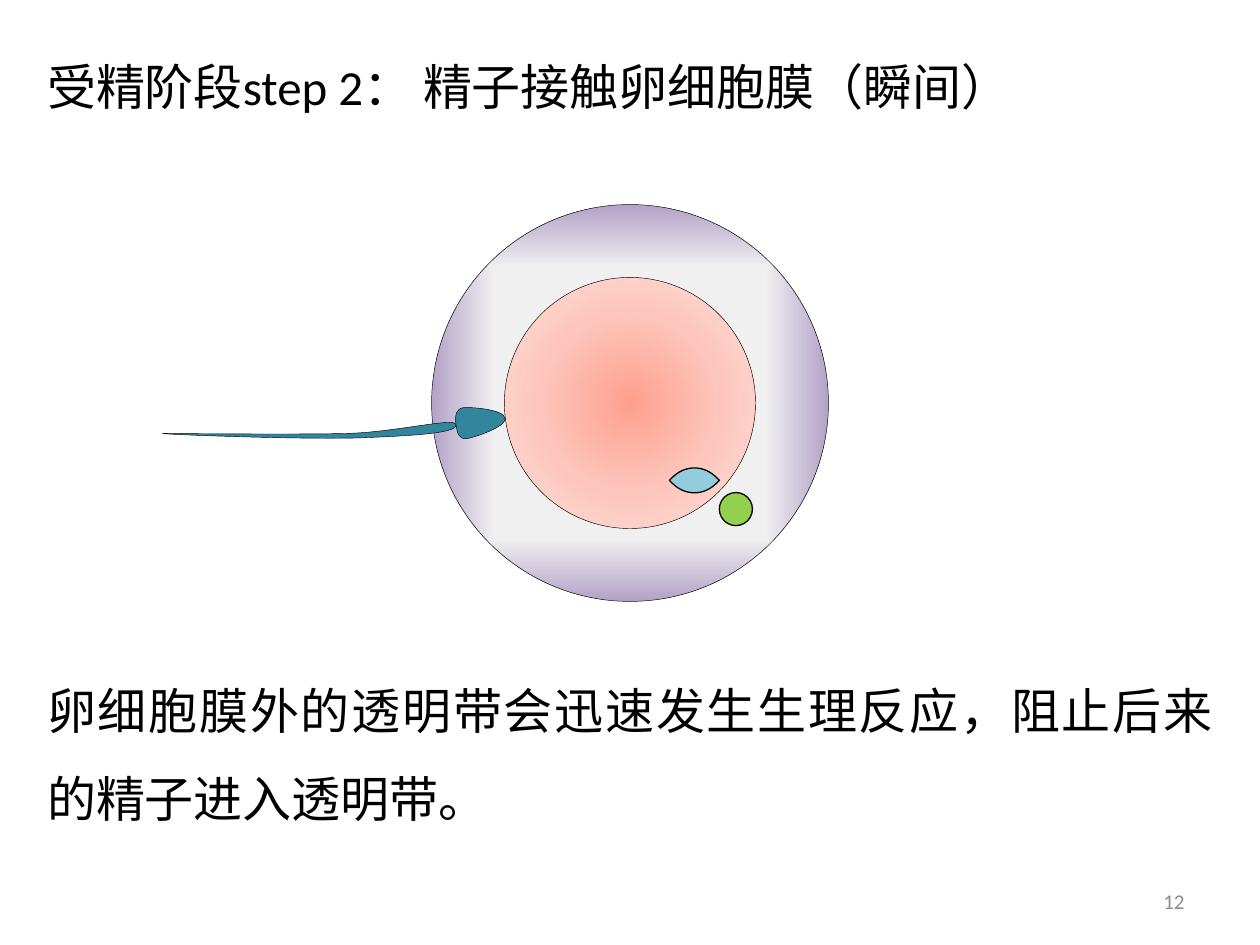
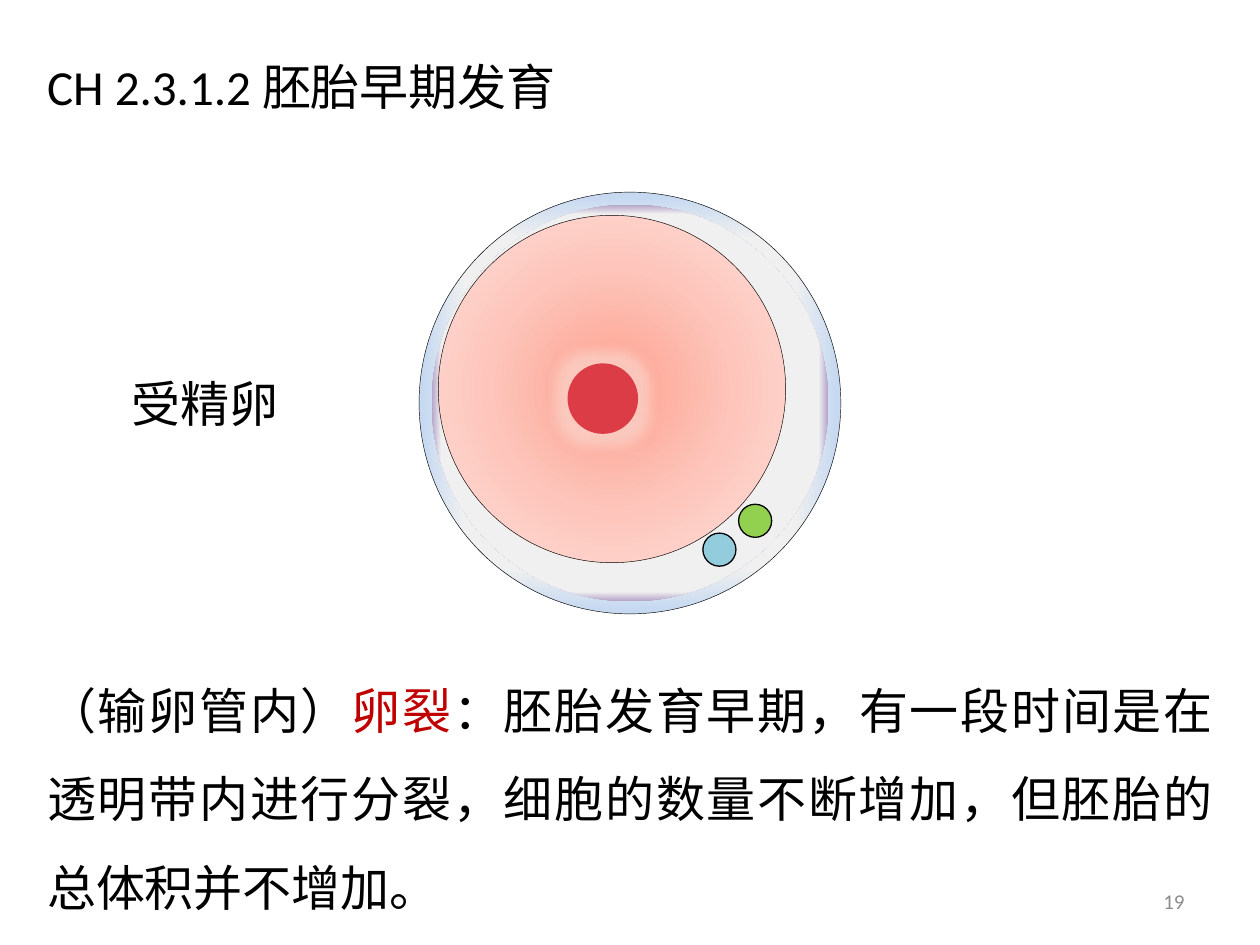
import math
import pptx
import pptx.dml.color
import pptx.enum.shapes
import pptx.enum.text
import pptx.oxml
import pptx.oxml.ns
import pptx.util

Pt = pptx.util.Pt
RGB = pptx.dml.color.RGBColor
ALIGN = pptx.enum.text.PP_ALIGN
ANCHOR = pptx.enum.text.MSO_ANCHOR
OVAL = pptx.enum.shapes.MSO_SHAPE.OVAL

FONT = "Calibri"
BLACK = RGB(0x00, 0x00, 0x00)
GREY = RGB(0x8C, 0x8C, 0x8C)
RED = RGB(0xC0, 0x00, 0x00)
PALE = RGB(0xF0, 0xF0, 0xF0)
MAUVE = RGB(0xB3, 0xA2, 0xC7)
SKY = RGB(0xC6, 0xD9, 0xF1)
CORAL = RGB(0xFE, 0xA0, 0x8E)
PINK = RGB(0xFD, 0xC5, 0xBB)
BLUSH = RGB(0xFD, 0xE2, 0xDE)
AQUA = RGB(0x93, 0xCD, 0xDD)
GREEN = RGB(0x92, 0xD0, 0x50)
TEAL = RGB(0x31, 0x85, 0x9C)
CRIMSON = RGB(0xDC, 0x3C, 0x46)
HALO = RGB(0xFB, 0xD0, 0xC6)

LEFT, WIDE = 19.84, 680.3
THIN = 0.25
CENTRE = (360, 230.3)
ZONA = 226.8
POLAR = 18.9
CELL = ("circle", [(0, CORAL), (50, PINK), (100, BLUSH)])

SPINDLE = [
    (382.5, 274.5), (383.9, 273.1),
    (387.5, 269.5, 391.8, 267.4, 396.8, 267.4),
    (401.8, 267.4, 406.1, 269.5, 409.7, 273.1),
    (411.1, 274.5), (409.7, 275.9),
    (406.1, 279.5, 401.8, 281.6, 396.8, 281.6),
    (391.8, 281.6, 387.5, 279.5, 383.9, 275.9),
]
HEAD = [
    (260.6, 242.6),
    (259.9, 237.6, 260.6, 233.3, 265, 233),
    (270, 232.6, 288, 234, 288.7, 239),
    (289.4, 244.1, 271.4, 249.8, 267.1, 250.6),
    (262.1, 251.3, 261.4, 247.7, 260.6, 242.6),
]
TAIL = [
    (92.9, 247.7),
    (91.4, 247.7, 169.9, 248.4, 198, 247.7),
    (226.1, 247, 259.9, 238.3, 260.6, 242.6),
    (262.1, 247.7, 234, 249.1, 205.9, 250.2),
    (177.8, 251.3, 94.3, 248.4, 92.9, 247.7),
]


def tag(name):
    return pptx.oxml.ns.qn(f"a:{name}")


def xml(text):
    return pptx.oxml.parse_xml(text.replace(">", f" {pptx.oxml.ns.nsdecls('a')}>", 1))


def rim(pale):
    return "rect", [(13, PALE), (pale, PALE), (100, MAUVE)]


def blend(shape, kind, stops):
    marks = "".join(
        f'<a:gs pos="{pos * 1000}"><a:srgbClr val="{tone}"/></a:gs>' for pos, tone in stops)
    shape.fill.gradient()
    old = shape._element.spPr.find(tag("gradFill"))
    new = xml(f'<a:gradFill rotWithShape="1"><a:gsLst>{marks}</a:gsLst><a:path path="{kind}">'
              '<a:fillToRect l="50000" t="50000" r="50000" b="50000"/></a:path></a:gradFill>')
    old.getparent().replace(old, new)


def style(shape, paint, width, edge=BLACK):
    shape.shadow.inherit = False
    if isinstance(paint, RGB):
        shape.fill.solid()
        shape.fill.fore_color.rgb = paint
    else:
        blend(shape, *paint)
    if edge is None:
        shape.line.fill.background()
        return
    shape.line.color.rgb = edge
    if width:
        shape.line.width = Pt(width)


def disc(slide, centre, size, paint, width=None, edge=BLACK):
    x, y = centre
    shape = slide.shapes.add_shape(
        OVAL, Pt(x - size / 2), Pt(y - size / 2), Pt(size), Pt(size))
    style(shape, paint, width, edge)
    return shape


def glow(shape, tone, size):
    effects = shape._element.spPr.find(tag("effectLst"))
    effects.append(xml(f'<a:glow rad="{Pt(size)}"><a:srgbClr val="{tone}">'
                       '<a:alpha val="80000"/></a:srgbClr></a:glow>'))


def spin(dots, angle):
    cos, sin = math.cos(math.radians(angle)), math.sin(math.radians(angle))
    return [(x * cos - y * sin, x * sin + y * cos) for x, y in dots]


def unturn(dots, angle):
    flat = spin(dots, -angle)
    mid = tuple((min(axis) + max(axis)) / 2 for axis in zip(*flat))
    goal = spin([mid], angle)[0]
    return [(x + goal[0] - mid[0], y + goal[1] - mid[1]) for x, y in flat]


def bend(shape, steps):
    lines = iter(list(shape._element.iter(tag("lnTo"))))
    for step in steps[1:]:
        first = next(lines)
        if len(step) == 2:
            continue
        arc = xml("<a:cubicBezTo></a:cubicBezTo>")
        first.addprevious(arc)
        for line in (first, next(lines), next(lines)):
            arc.append(line[0])
            line.getparent().remove(line)


def curve(slide, steps, paint, width=None, turn=0):
    dots = [step[i:i + 2] for step in steps for i in range(0, len(step), 2)]
    dots = [(Pt(x), Pt(y)) for x, y in unturn(dots, turn)]
    pen = slide.shapes.build_freeform(*dots[0])
    pen.add_line_segments(dots[1:], close=True)
    shape = pen.convert_to_shape()
    bend(shape, steps)
    shape.rotation = turn
    style(shape, paint, width)


def write(slide, box, runs, size=28, align=ALIGN.JUSTIFY, anchor=ANCHOR.MIDDLE,
          tone=BLACK, space=None):
    frame = slide.shapes.add_textbox(*map(Pt, box)).text_frame
    frame.word_wrap = True
    frame.vertical_anchor = anchor
    para = frame.paragraphs[0]
    para.alignment = align
    para.line_spacing = space
    para.font.name = FONT
    para.font.size = Pt(size)
    para.font.color.rgb = tone
    for text, shade in runs:
        run = para.add_run()
        run.text = text
        if shade:
            run.font.color.rgb = shade


def page(deck):
    return deck.slides.add_slide(deck.slide_layouts[6])


def label(slide, title, body, height, number):
    write(slide, (LEFT, 368.6, WIDE, height), body, anchor=ANCHOR.TOP, space=1.5)
    write(slide, (516, 500.5, 168, 28.75), [(number, None)], 12, ALIGN.RIGHT, tone=GREY)
    write(slide, (LEFT, 25.9, WIDE, 46.1), [(title, None)])


def touch(deck):
    slide = page(deck)
    label(slide, "受精阶段step 2： 精子接触卵细胞膜（瞬间）",
          [("卵细胞膜外的透明带会迅速发生生理反应，阻止后来的精子进入透明带。", None)],
          121, "12")
    disc(slide, CENTRE, ZONA, rim(68), THIN)
    disc(slide, CENTRE, 143.5, CELL, THIN)
    curve(slide, SPINDLE, AQUA)
    disc(slide, (420.5, 290.9), POLAR, GREEN)
    curve(slide, HEAD, TEAL, THIN, 353.2)
    curve(slide, TAIL, TEAL, THIN, 345.8)


def zygote(deck):
    slide = page(deck)
    disc(slide, CENTRE, 241, ("rect", [(13, PALE), (78, PALE), (98, SKY)]), THIN)
    label(slide, "CH 2.3.1.2 胚胎早期发育",
          [("（输卵管内）", None), ("卵裂", RED),
           ("：胚胎发育早期，有一段时间是在透明带内进行分裂，"
            "细胞的数量不断增加，但胚胎的总体积并不增加。", None)],
          176.4, "19")
    disc(slide, CENTRE, ZONA, rim(95), edge=None)
    disc(slide, (349.7, 222.3), 198.5, CELL, THIN)
    disc(slide, (431.5, 297.6), POLAR, GREEN)
    glow(disc(slide, (344.5, 227.8), 40.3, CRIMSON, edge=None), HALO, 14)
    disc(slide, (411.1, 314.1), POLAR, AQUA)
    write(slide, (24.4, 209.5, 141.8, 41.2), [("受精卵", None)], align=ALIGN.RIGHT)


def main():
    deck = pptx.Presentation()
    deck.slide_width, deck.slide_height = Pt(720), Pt(540)
    touch(deck)
    zygote(deck)
    deck.save("out.pptx")


if __name__ == "__main__":
    main()
